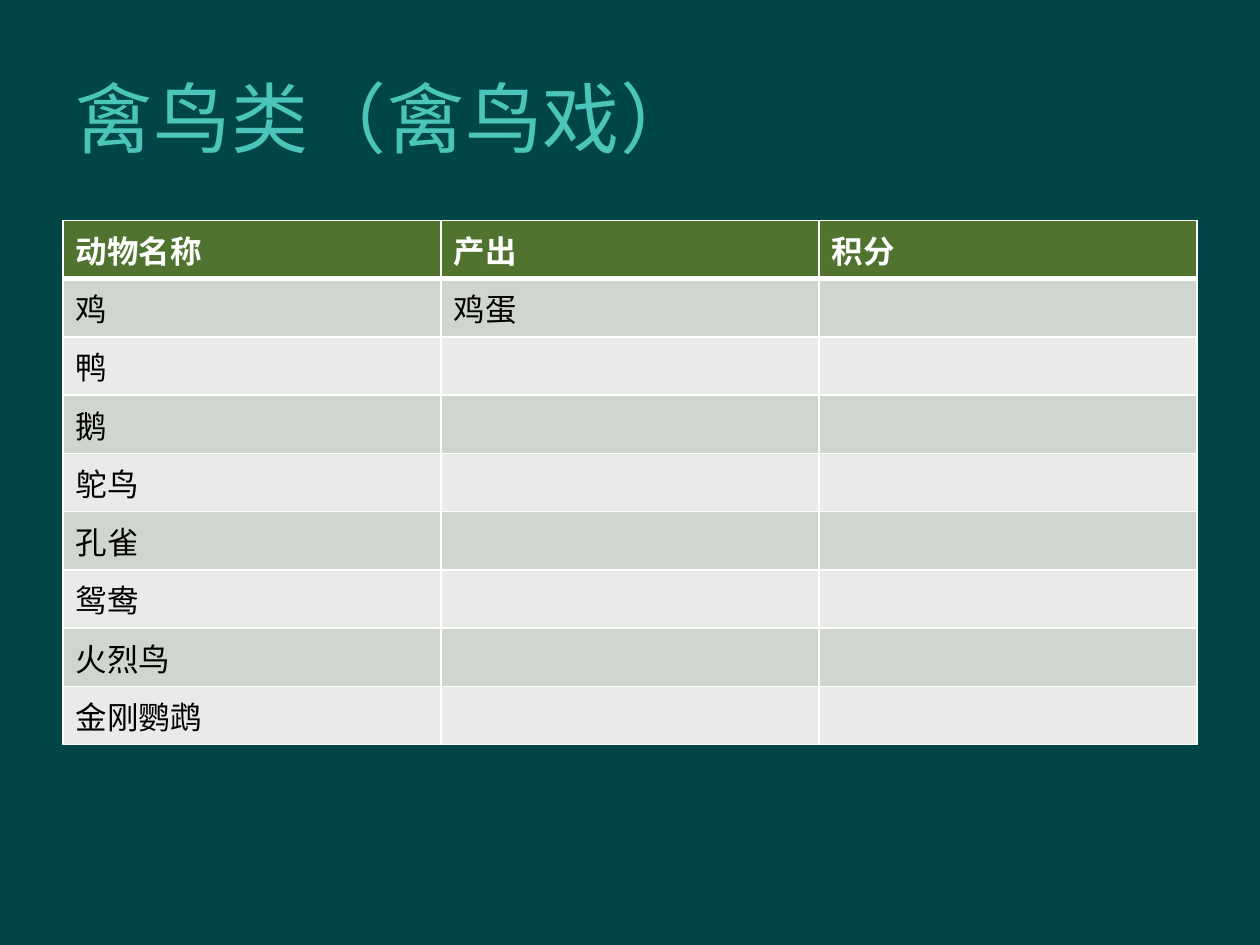
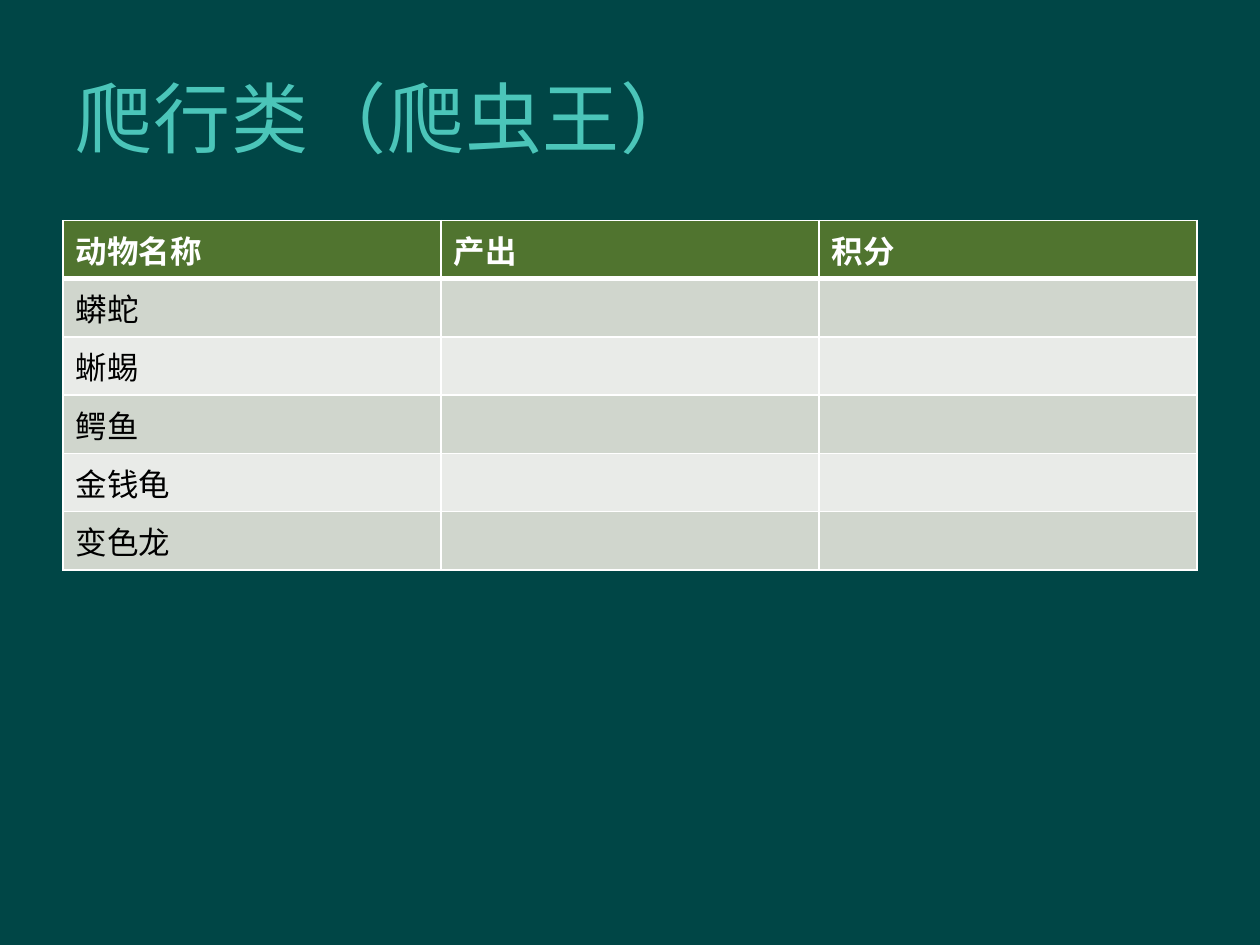
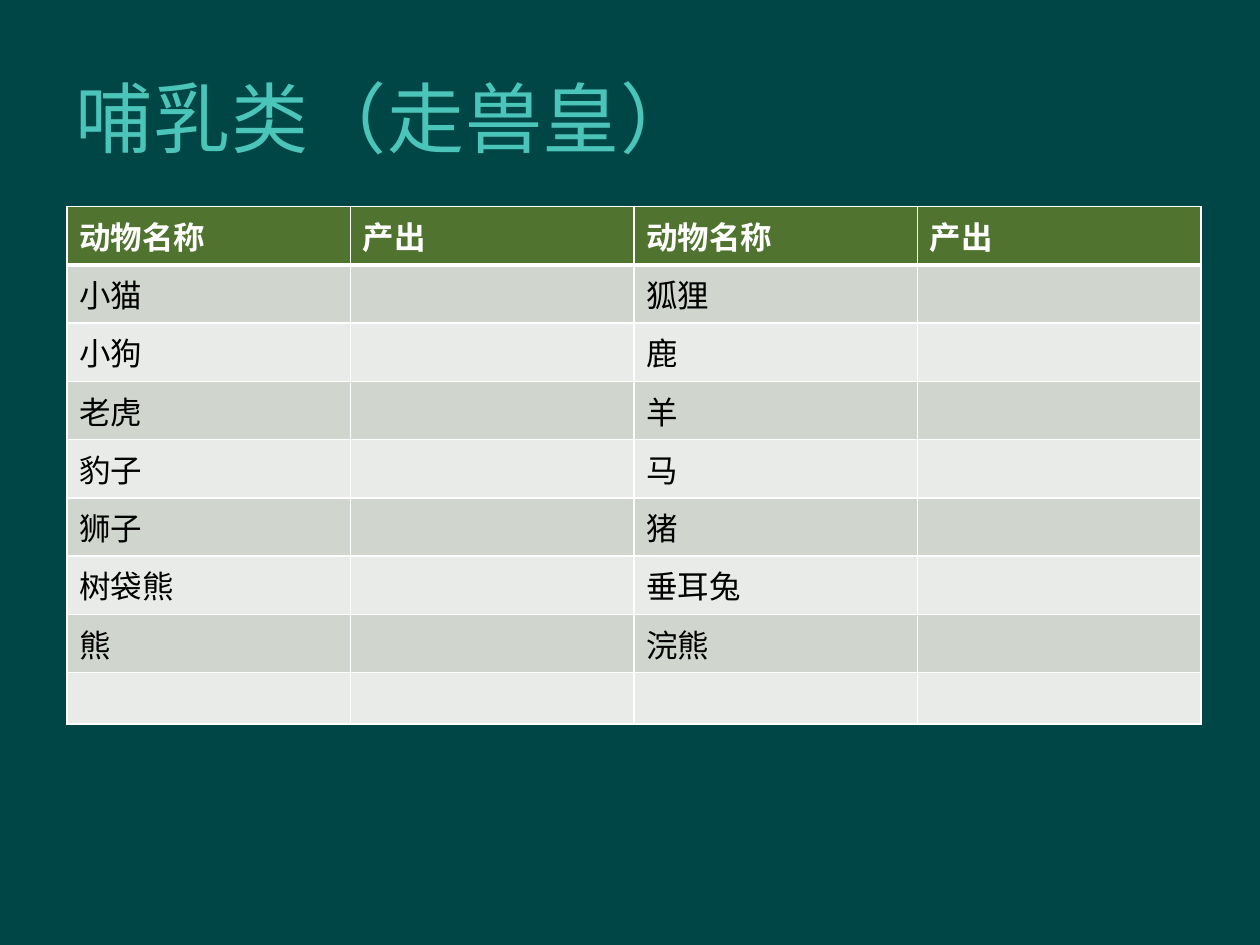
from lxml.etree import SubElement
from pptx import Presentation
from pptx.dml.color import RGBColor
from pptx.enum.text import MSO_ANCHOR, PP_ALIGN
from pptx.oxml.ns import qn
from pptx.util import Inches, Pt

BACKGROUND = RGBColor(0x00, 0x46, 0x46)
TITLE = RGBColor(0x4B, 0xC5, 0xB9)
HEADER = RGBColor(0x50, 0x74, 0x2F)
BAND_DARK = RGBColor(0xD0, 0xD6, 0xCD)
BAND_LIGHT = RGBColor(0xE9, 0xEB, 0xE8)
WHITE = RGBColor(0xFF, 0xFF, 0xFF)
BLACK = RGBColor(0x00, 0x00, 0x00)

TABLE_WIDTH = 9
ROW_HEIGHT = 0.41
RULE = 1
HEADER_RULE = 3

# Title, table left and top, rows with the header first
ANIMAL_CLASSES = [
    ("禽鸟类（禽鸟戏）", 0.5, 1.75, [
        ("动物名称", "产出", "积分"),
        ("鸡", "鸡蛋", ""),
        ("鸭", "", ""),
        ("鹅", "", ""),
        ("鸵鸟", "", ""),
        ("孔雀", "", ""),
        ("鸳鸯", "", ""),
        ("火烈鸟", "", ""),
        ("金刚鹦鹉", "", ""),
    ]),
    ("爬行类（爬虫王）", 0.5, 1.75, [
        ("动物名称", "产出", "积分"),
        ("蟒蛇", "", ""),
        ("蜥蜴", "", ""),
        ("鳄鱼", "", ""),
        ("金钱龟", "", ""),
        ("变色龙", "", ""),
    ]),
    ("哺乳类（走兽皇）", 0.53, 1.64, [
        ("动物名称", "产出", "动物名称", "产出"),
        ("小猫", "", "狐狸", ""),
        ("小狗", "", "鹿", ""),
        ("老虎", "", "羊", ""),
        ("豹子", "", "马", ""),
        ("狮子", "", "猪", ""),
        ("树袋熊", "", "垂耳兔", ""),
        ("熊", "", "浣熊", ""),
        ("", "", "", ""),
    ]),
]


def add_borders(cell, top, bottom):
    """Draw white cell borders; call before filling, as lines precede the fill."""
    properties = cell._tc.get_or_add_tcPr()
    for side, width in (("lnL", RULE), ("lnR", RULE), ("lnT", top), ("lnB", bottom)):
        line = SubElement(properties, qn(f"a:{side}"), w=str(Pt(width)))
        fill = SubElement(line, qn("a:solidFill"))
        SubElement(fill, qn("a:srgbClr"), val=str(WHITE))


prs = Presentation()
prs.slide_width = Inches(10)
prs.slide_height = Inches(7.5)
master_fill = prs.slide_master.background.fill
master_fill.solid()
master_fill.fore_color.rgb = BACKGROUND
title_only = prs.slide_layouts[5]

for heading, left, top, rows in ANIMAL_CLASSES:
    slide = prs.slides.add_slide(title_only)

    title = slide.shapes.title
    title.left, title.top = Inches(0.5), Inches(0.3)
    title.width, title.height = Inches(8.5), Inches(1.25)
    title.text_frame.text = heading
    title.text_frame.vertical_anchor = MSO_ANCHOR.MIDDLE
    paragraph = title.text_frame.paragraphs[0]
    paragraph.alignment = PP_ALIGN.LEFT
    paragraph.font.name = "Arial"
    paragraph.font.size = Pt(44)
    paragraph.font.color.rgb = TITLE
    paragraph.runs[0]._r.get_or_add_rPr().set("spc", "50")

    animals = slide.shapes.add_table(
        len(rows), len(rows[0]), Inches(left), Inches(top),
        Inches(TABLE_WIDTH), Inches(ROW_HEIGHT * len(rows))).table
    for row_index, row in enumerate(rows):
        animals.rows[row_index].height = Inches(ROW_HEIGHT)
        is_header = row_index == 0
        band = HEADER if is_header else BAND_DARK if row_index % 2 else BAND_LIGHT
        for column_index, label in enumerate(row):
            cell = animals.cell(row_index, column_index)
            add_borders(cell, HEADER_RULE if row_index == 1 else RULE,
                        HEADER_RULE if is_header else RULE)
            cell.fill.solid()
            cell.fill.fore_color.rgb = band
            cell.text = label
            font = cell.text_frame.paragraphs[0].font
            font.name = "Times New Roman"
            font.size = Pt(18)
            font.bold = is_header
            font.color.rgb = WHITE if is_header else BLACK

prs.save("out.pptx")
